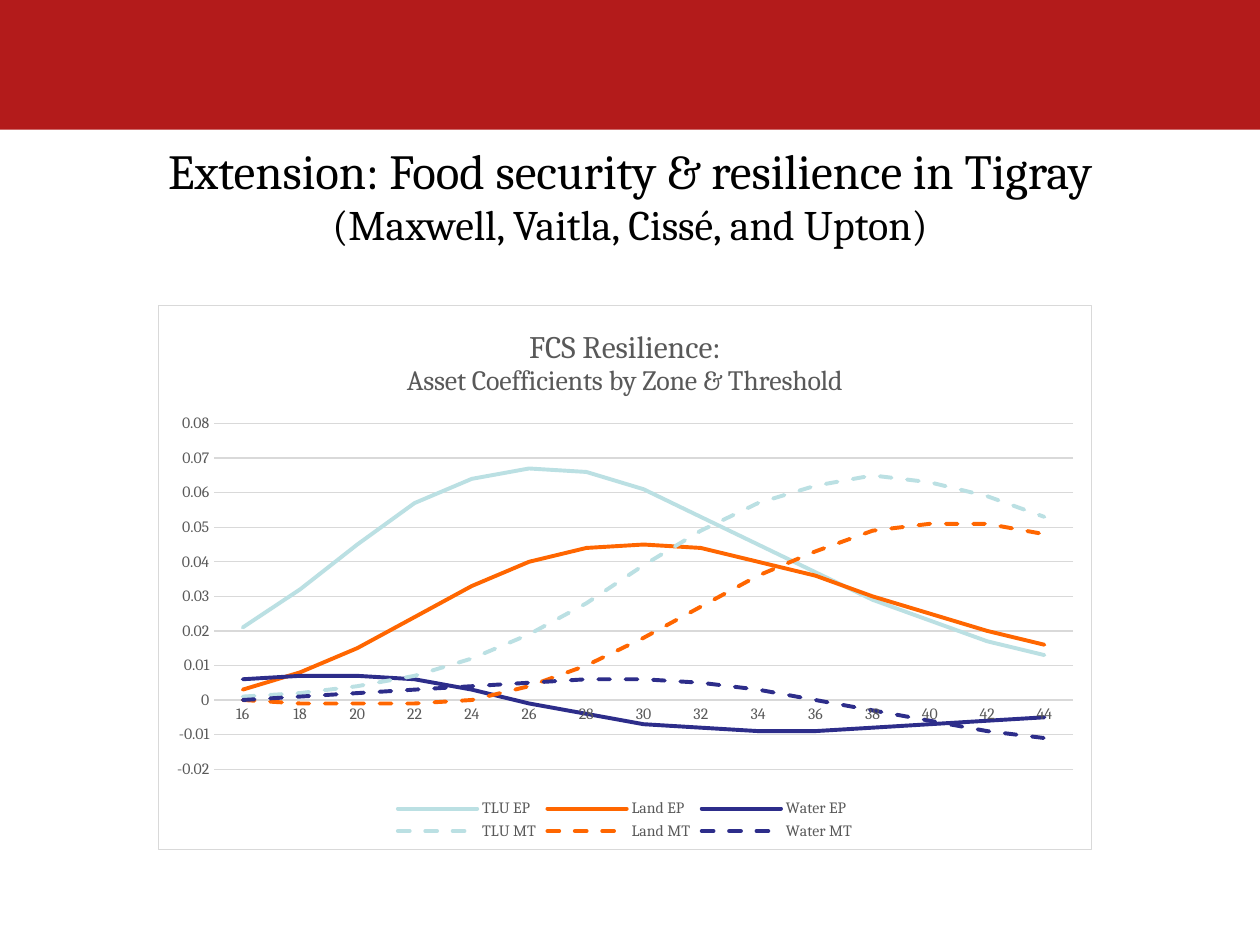
from dataclasses import dataclass

from lxml import etree
from pptx import Presentation
from pptx import util as u
from pptx.chart.data import CategoryChartData
from pptx.dml.color import RGBColor
from pptx.enum import chart as ch, dml, shapes, text
from pptx.oxml import parse_xml
from pptx.oxml.ns import nsdecls, qn

FONT = "Cambria"
RED, BLACK, WHITE, GREY, RULE = "B31B1B", "000000", "FFFFFF", "595959", "D9D9D9"
TLU, LAND, WATER = "BBE0E3", "FF6600", "2D2D8A"


@dataclass
class Line:
    name: str
    color: str
    thousandths: list[int]
    dashed: bool = False


LINES = [
    Line("TLU EP", TLU, [21, 32, 45, 57, 64, 67, 66, 61, 53, 45, 37, 29, 23, 17, 13]),
    Line("Land EP", LAND, [3, 8, 15, 24, 33, 40, 44, 45, 44, 40, 36, 30, 25, 20, 16]),
    Line("Water EP", WATER, [6, 7, 7, 6, 3, -1, -4, -7, -8, -9, -9, -8, -7, -6, -5]),
    Line("TLU MT", TLU, [1, 2, 4, 7, 12, 19, 28, 39, 49, 57, 62, 65, 63, 59, 53], True),
    Line("Land MT", LAND, [0, -1, -1, -1, 0, 4, 10, 18, 27, 36, 43, 49, 51, 51, 48], True),
    Line("Water MT", WATER, [0, 1, 2, 3, 4, 5, 6, 6, 5, 3, 0, -3, -6, -9, -11], True),
]


def rgb(value: str) -> RGBColor:
    return RGBColor.from_string(value)


def style_font(font, size: float, color: str) -> None:
    font.name, font.size, font.bold = FONT, u.Pt(size), False
    font.color.rgb = rgb(color)


def style_line(line, color: str, width: float) -> None:
    line.color.rgb = rgb(color)
    line.width = u.Pt(width)


def place(element, index: int, box: tuple, inner: bool = False) -> None:
    """Lay out a chart part by shares of the chart: x, y, width, height."""
    for old in element.findall(qn("c:layout")):
        element.remove(old)
    layout = etree.Element(qn("c:layout"))
    manual = etree.SubElement(layout, qn("c:manualLayout"))
    settings = [("layoutTarget", "inner")] if inner else []
    settings += [("xMode", "edge"), ("yMode", "edge"), *zip("xywh", box)]
    for tag, value in settings:
        etree.SubElement(manual, qn(f"c:{tag}")).set("val", str(value))
    element.insert(index, layout)


prs = Presentation()
prs.slide_width, prs.slide_height = u.Inches(10), u.Inches(7.5)
slide = prs.slides.add_slide(prs.slide_layouts[5])

# Red band, behind the title
band = slide.shapes.add_shape(shapes.MSO_SHAPE.RECTANGLE, 0, 0, prs.slide_width, u.Inches(1.03))
band.shadow.inherit = False
band.fill.solid()
band.fill.fore_color.rgb = rgb(RED)
band.line.fill.background()
slide.shapes._spTree.insert(2, band._element)

# Slide title
title = slide.shapes.title
title.left, title.top, title.width, title.height = map(u.Inches, (0.75, 0.92, 8.5, 1.25))
tf = title.text_frame
tf.word_wrap = True
tf.auto_size = text.MSO_AUTO_SIZE.NONE
tf.vertical_anchor = text.MSO_ANCHOR.MIDDLE
p = tf.paragraphs[0]
p.alignment = text.PP_ALIGN.CENTER
for words, size in [("Extension: Food security & resilience in Tigray ", 28),
                    ("(Maxwell, Vaitla, Cissé, and Upton)", 24)]:
    r = p.add_run()
    r.text = words
    style_font(r.font, size, BLACK)

# Line chart
data = CategoryChartData(number_format="General")
data.categories = [str(score) for score in range(16, 45, 2)]
for line in LINES:
    data.add_series(line.name, [n / 1000 for n in line.thousandths])
chart = slide.shapes.add_chart(
    ch.XL_CHART_TYPE.LINE, *map(u.Inches, (1.25, 2.42, 7.42, 4.33)), data).chart
style_font(chart.font, 10, BLACK)
chart.plots[0].vary_by_categories = False

for series, line in zip(chart.plots[0].series, LINES):
    series.smooth = False
    series.marker.style = ch.XL_MARKER_STYLE.NONE
    style_line(series.format.line, line.color, 2.25)
    if line.dashed:
        series.format.line.dash_style = dml.MSO_LINE.DASH
    series.format.line._get_or_add_ln().set("cap", "rnd")

# Chart title
chart.has_title = True
tf = chart.chart_title.text_frame
tf.text = "FCS Resilience:\nAsset Coefficients by Zone & Threshold"
for p, size in zip(tf.paragraphs, (18, 16)):
    style_font(p.runs[0].font, size, GREY)
chart.chart_title.include_in_layout = False

# Axes
for axis in (chart.category_axis, chart.value_axis):
    axis.major_tick_mark = axis.minor_tick_mark = ch.XL_TICK_MARK.NONE
    style_font(axis.tick_labels.font, 9, GREY)
style_line(chart.category_axis.format.line, RULE, 0.75)
values = chart.value_axis
values.minimum_scale, values.maximum_scale, values.major_unit = -0.02, 0.08, 0.01
values.format.line.fill.background()
style_line(values.major_gridlines.format.line, RULE, 0.75)

# Legend and plot area
chart.has_legend = True
chart.legend.position = ch.XL_LEGEND_POSITION.BOTTOM
chart.legend.include_in_layout = False
style_font(chart.legend.font, 9, GREY)
place(chart.legend._element, 1, (0.25, 0.9, 0.5, 0.09))
place(chart._chartSpace.chart.plotArea, 0, (0.06, 0.217, 0.92, 0.635), inner=True)

# Chart background and border
chart._chartSpace.chart.addnext(parse_xml(
    f'<c:spPr {nsdecls("c", "a")}>'
    f'<a:solidFill><a:srgbClr val="{WHITE}"/></a:solidFill>'
    f'<a:ln w="{u.Pt(0.75)}"><a:solidFill><a:srgbClr val="{RULE}"/></a:solidFill></a:ln>'
    '</c:spPr>'))

prs.save("out.pptx")
